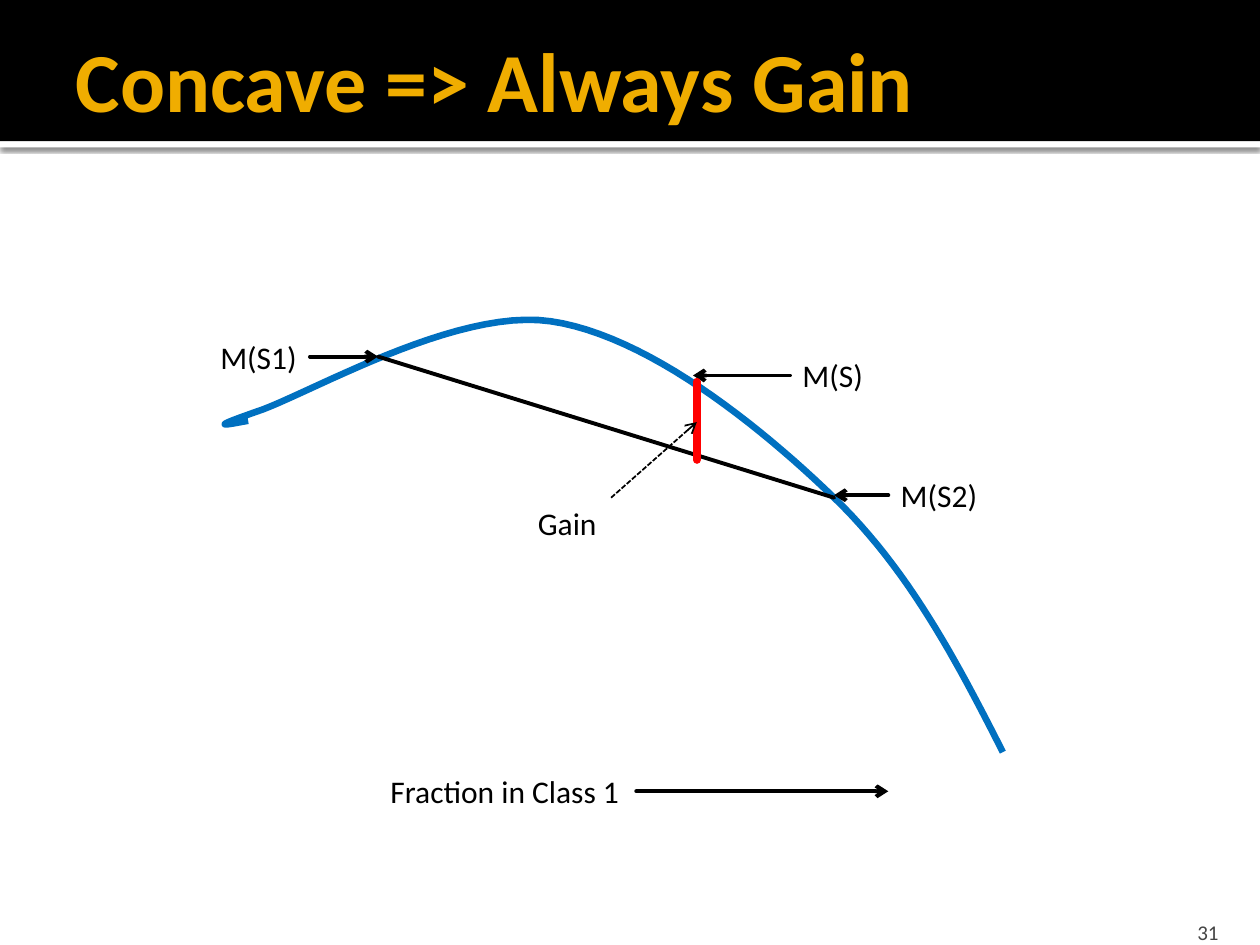
from lxml.etree import SubElement
from pptx import Presentation
from pptx.dml.color import RGBColor
from pptx.enum.dml import MSO_LINE
from pptx.enum.shapes import MSO_CONNECTOR, MSO_SHAPE
from pptx.enum.text import MSO_ANCHOR as Anchor, MSO_AUTO_SIZE as AutoSize, PP_ALIGN as Align
from pptx.oxml.ns import qn
from pptx.util import Inches, Pt

BLACK = RGBColor(0x00, 0x00, 0x00)
WHITE = RGBColor(0xFF, 0xFF, 0xFF)
GOLD = RGBColor(0xF0, 0xAD, 0x00)
GREY = RGBColor(0x45, 0x45, 0x45)
BLUE = RGBColor(0x00, 0x70, 0xC0)
RED = RGBColor(0xFF, 0x00, 0x00)

WIDTH, HEIGHT = 10, 7.5
BAND, RULE = 1.12, 0.05
LABEL_HEIGHT = 0.4
LEFT_SIDE, RIGHT_SIDE = 1, 3
STEPS = 24

TITLE = "Concave => Always Gain"
PAGE_NUMBER = "31"
# label, left, top, width, side the arrow leaves from, x of the arrow tip
POINTERS = [
    ("M(S2)", 7.05, 3.73, 0.82, LEFT_SIDE, 6.62),
    ("M(S)", 6.27, 2.78, 0.69, LEFT_SIDE, 5.5),
    ("M(S1)", 1.65, 2.63, 0.81, RIGHT_SIDE, 3),
    ("Fraction in Class 1", 3, 6.08, 2.05, RIGHT_SIDE, 7.05),
]
CURVE_START = (1.97, 3.34)
CURVE = [  # two control points and an end point per segment
    ((1.8, 3.37), (1.63, 3.41), (2.03, 3.27)),
    ((2.43, 3.14), (3.61, 2.44), (4.37, 2.55)),
    ((5.13, 2.66), (6.02, 3.37), (6.62, 3.95)),
    ((7.21, 4.52), (7.59, 5.24), (7.96, 5.97)),
]
CHORD = ((3, 2.83), (6.62, 3.95))
GAIN = ((5.53, 3.03), (5.53, 3.65))
GAIN_POINTER = ((4.85, 3.95), (5.53, 3.35))


def write(shape, text, size, color, bold=False, align=Align.LEFT, **frame_format):
    frame = shape.text_frame
    for name, value in frame_format.items():
        setattr(frame, name, value)
    para = frame.paragraphs[0]
    para.alignment = align
    span = para.add_run()
    span.text = text
    for name, value in dict(name="Calibri", size=Pt(size), bold=bold).items():
        setattr(span.font, name, value)
    span.font.color.rgb = color


def add_label(shapes, text, left, top, width):
    box = shapes.add_textbox(*map(Inches, (left, top, width, LABEL_HEIGHT)))
    write(box, text, 18, BLACK, word_wrap=False, auto_size=AutoSize.SHAPE_TO_FIT_TEXT)
    return box


def add_line(shapes, start, end, color=BLACK, weight=2.25, dash=None, arrow=False):
    line = shapes.add_connector(MSO_CONNECTOR.STRAIGHT, *map(Inches, (*start, *end)))
    line.line.color.rgb = color
    line.line.width = Pt(weight)
    outline = line.element.spPr.find(qn("a:ln"))
    if dash:
        line.line.dash_style = dash
    else:
        outline.set("cap", "rnd")
    if arrow:
        SubElement(outline, qn("a:tailEnd"), type="arrow")
    SubElement(line.element.spPr, qn("a:effectLst"))
    return line


def add_bar(shapes, top, height, color):
    bar = shapes.add_shape(MSO_SHAPE.RECTANGLE, *map(Inches, (0, top, WIDTH, height)))
    bar.shadow.inherit = False
    bar.fill.solid()
    bar.fill.fore_color.rgb = color
    bar.line.fill.background()
    return bar


def add_drop_shadow(shape):
    effects = shape.element.spPr.find(qn("a:effectLst"))
    shadow = SubElement(effects, qn("a:outerShdw"), blurRad=str(Pt(2.5)), dist=str(Pt(0.8)),
                        dir=str(90 * 60000), algn="tl", rotWithShape="0")
    color = SubElement(shadow, qn("a:srgbClr"), val=str(BLACK))
    SubElement(color, qn("a:alpha"), val="60000")


def curve_points():
    """Sample the chain of cubic Bézier segments at equal parameter steps."""
    start = CURVE_START
    for first, second, end in CURVE:
        for step in range(1, STEPS + 1):
            t = step / STEPS
            u = 1 - t
            yield tuple(u**3 * a + 3 * u * u * t * b + 3 * u * t * t * c + t**3 * d
                        for a, b, c, d in zip(start, first, second, end))
        start = end


def add_curve(shapes):
    # The builder rounds coordinates to whole units, so they are given in EMU.
    builder = shapes.build_freeform(*map(Inches, CURVE_START))
    builder.add_line_segments([(Inches(x), Inches(y)) for x, y in curve_points()], close=False)
    curve = builder.convert_to_shape()
    curve.shadow.inherit = False
    curve.fill.background()
    curve.line.color.rgb = BLUE
    curve.line.width = Pt(3.78)


def add_pointer(shapes, text, left, top, width, side, tip):
    group = shapes.add_group_shape().shapes
    label = add_label(group, text, left, top, width)
    middle = top + LABEL_HEIGHT / 2
    start = left if side == LEFT_SIDE else left + width
    arrow = add_line(group, (start, middle), (tip, middle), arrow=True)
    arrow.begin_connect(label, side)


def main():
    deck = Presentation()
    deck.slide_width, deck.slide_height = Inches(WIDTH), Inches(HEIGHT)
    page = deck.slides.add_slide(deck.slide_layouts[5])
    shapes = page.shapes

    add_drop_shadow(add_bar(shapes, BAND, RULE, WHITE))
    add_bar(shapes, 0, BAND, BLACK)

    title = shapes.title
    title.element.getparent().append(title.element)  # bring in front of the band
    title.left, title.top, title.width, title.height = map(Inches, (0.5, 0.17, 9.5, 0.92))
    write(title, TITLE, 48, GOLD, bold=True, vertical_anchor=Anchor.MIDDLE,
          margin_right=Inches(0.05), auto_size=AutoSize.NONE)

    number = shapes.add_textbox(*map(Inches, (8.97, 7.2, 0.8, 0.3)))
    write(number, PAGE_NUMBER, 12, GREY, align=Align.RIGHT, word_wrap=True,
          vertical_anchor=Anchor.BOTTOM, margin_bottom=0)

    add_curve(shapes)
    add_line(shapes, *CHORD)
    for pointer in POINTERS:
        add_pointer(shapes, *pointer)
    add_line(shapes, *GAIN, color=RED, weight=4.5)
    add_label(shapes, "Gain", 4.17, 3.95, 0.69)
    add_line(shapes, *GAIN_POINTER, weight=1, dash=MSO_LINE.SQUARE_DOT, arrow=True)

    deck.save("out.pptx")


if __name__ == "__main__":
    main()
